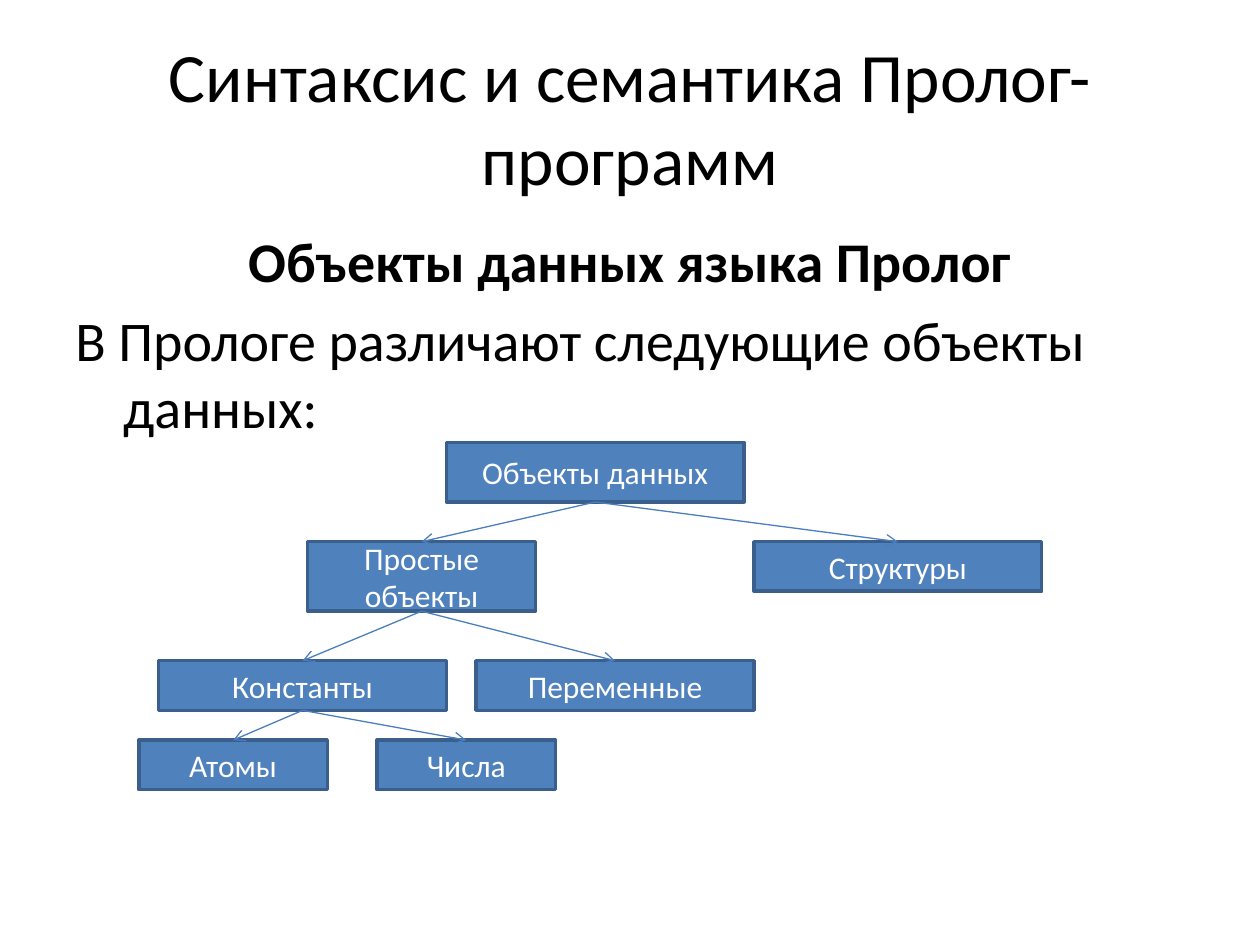
from lxml import etree
from pptx import Presentation
from pptx import util as u
from pptx.dml.color import RGBColor
from pptx.enum import shapes, text
from pptx.oxml import ns

TITLE = "Синтаксис и семантика Пролог-программ"
SUBTITLE = "Объекты данных языка Пролог"
INTRO = "В Прологе различают следующие объекты данных:"

# name: (parent, column, row, columns wide, rows high)
TREE = {
    "Объекты данных": (None, 44, 0, 30, 6),
    "Простые объекты": ("Объекты данных", 30, 10, 23, 7),
    "Структуры": ("Объекты данных", 75, 10, 29, 5),
    "Константы": ("Простые объекты", 15, 22, 29, 5),
    "Переменные": ("Простые объекты", 47, 22, 28, 5),
    "Атомы": ("Константы", 13, 30, 19, 5),
    "Числа": ("Константы", 37, 30, 18, 5),
}

BLACK = RGBColor(0x00, 0x00, 0x00)
WHITE = RGBColor(0xFF, 0xFF, 0xFF)
BLUE = RGBColor(0x4F, 0x81, 0xBD)
DARK_BLUE = RGBColor(0x3A, 0x5F, 0x8C)
ARROW_BLUE = RGBColor(0x4B, 0x7E, 0xBC)

CELL = u.Mm(2)
TREE_LEFT, TREE_TOP = u.Mm(1), u.Mm(89.2)
MARGIN, CONTENT_WIDTH = u.Inches(0.5), u.Inches(9)
HANGING = u.Inches(0.38)


def write(paragraph, words, size, color=BLACK, bold=False,
          align=text.PP_ALIGN.CENTER, before=0, hanging=0):
    paragraph.alignment = align
    paragraph.space_before = u.Pt(before)
    if hanging:
        properties = paragraph._p.get_or_add_pPr()
        properties.set("marL", str(hanging))
        properties.set("indent", str(-hanging))
    run = paragraph.add_run()
    run.text = words
    run.font.name = "Calibri"
    run.font.size = u.Pt(size)
    run.font.bold = bold
    run.font.color.rgb = color


def add_node(slide, name, column, row, columns, rows):
    node = slide.shapes.add_shape(
        shapes.MSO_SHAPE.RECTANGLE, TREE_LEFT + column * CELL,
        TREE_TOP + row * CELL, columns * CELL, rows * CELL)
    node.shadow.inherit = False
    node.fill.solid()
    node.fill.fore_color.rgb = BLUE
    node.line.color.rgb = DARK_BLUE
    node.line.width = u.Pt(2)
    node.text_frame.word_wrap = True
    node.text_frame.vertical_anchor = text.MSO_ANCHOR.MIDDLE
    write(node.text_frame.paragraphs[0], name, 18, color=WHITE)
    return node


def add_arrow(slide, parent, child):
    arrow = slide.shapes.add_connector(shapes.MSO_CONNECTOR.STRAIGHT, 0, 0, 0, 0)
    arrow.begin_connect(parent, 2)
    arrow.end_connect(child, 0)
    arrow.line.color.rgb = ARROW_BLUE
    arrow.line.width = u.Pt(0.75)
    etree.SubElement(arrow.line._get_or_add_ln(), ns.qn("a:tailEnd"), type="arrow")
    etree.SubElement(arrow._element.spPr, ns.qn("a:effectLst"))


def main():
    deck = Presentation()
    deck.slide_width, deck.slide_height = u.Inches(10), u.Inches(7.5)
    slide = deck.slides.add_slide(deck.slide_layouts[5])

    title = slide.shapes.title
    title.left, title.top = MARGIN, u.Inches(0.3)
    title.width, title.height = CONTENT_WIDTH, u.Inches(1.25)
    title.text_frame.vertical_anchor = text.MSO_ANCHOR.MIDDLE
    title.text_frame.auto_size = text.MSO_AUTO_SIZE.NONE
    write(title.text_frame.paragraphs[0], TITLE, 39.6)

    body = slide.shapes.add_textbox(
        MARGIN, u.Inches(1.75), CONTENT_WIDTH, u.Inches(4.95)).text_frame
    body.word_wrap = True
    write(body.paragraphs[0], SUBTITLE, 32, bold=True, before=6.4, hanging=HANGING)
    write(body.add_paragraph(), INTRO, 32, align=text.PP_ALIGN.LEFT,
          before=6.4, hanging=HANGING)

    nodes = {name: add_node(slide, name, column + 0.5, *place)
             for name, (parent, column, *place) in TREE.items()}
    for name, (parent, *place) in TREE.items():
        if parent:
            add_arrow(slide, nodes[parent], nodes[name])

    deck.save("out.pptx")


if __name__ == "__main__":
    main()
